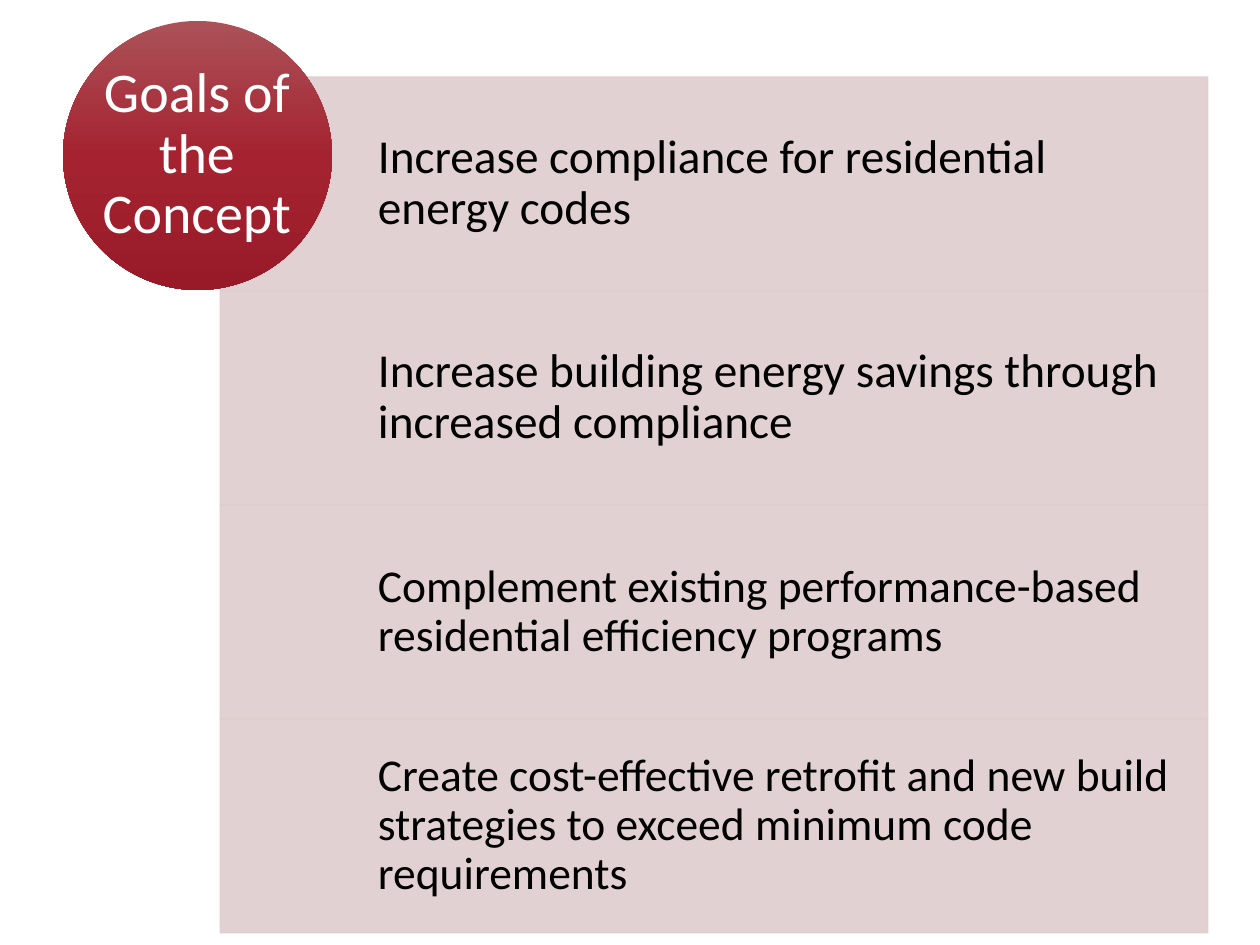
"""Build the slide listing the four goals of the concept."""
from copy import deepcopy

from lxml import etree
from pptx import Presentation
from pptx.dml.color import RGBColor
from pptx.enum.shapes import MSO_SHAPE
from pptx.enum.text import MSO_ANCHOR, PP_ALIGN
from pptx.oxml.ns import qn
from pptx.util import Emu, Pt

RECTANGLE, OVAL = MSO_SHAPE.RECTANGLE, MSO_SHAPE.OVAL
MIDDLE = MSO_ANCHOR.MIDDLE
LEFT, CENTER = PP_ALIGN.LEFT, PP_ALIGN.CENTER

BLACK = RGBColor(0x00, 0x00, 0x00)
WHITE = RGBColor(0xFF, 0xFF, 0xFF)
BLUSH = RGBColor(0xDF, 0xCD, 0xCE)
BADGE_REDS = [
    (0, RGBColor(0xAB, 0x52, 0x58)),
    (0.5, RGBColor(0xA5, 0x23, 0x31)),
    (1, RGBColor(0x98, 0x1A, 0x28)),
]

EMU_PER_PX = 914400 / 126
ROW_TOP, ROW_HEIGHT = 77, 214
GOALS = [
    ("Increase compliance for residential energy codes", 27, 26),
    ("Increase building energy savings through increased compliance", 27, 26),
    ("Complement existing performance-based residential efficiency programs", 26, 25),
    ("Create cost-effective retrofit and new build strategies to exceed minimum code requirements", 26, 25),
]


def px(*lengths):
    return [Emu(round(length * EMU_PER_PX)) for length in lengths]


def add_text(text, box, size, color, align=LEFT, inset=0):
    frame = slide.shapes.add_textbox(*px(*box)).text_frame
    frame.word_wrap = True
    frame.vertical_anchor = MIDDLE
    frame.margin_left = 0
    frame.margin_top = frame.margin_right = frame.margin_bottom = px(inset)[0]
    paragraph = frame.paragraphs[0]
    paragraph.alignment = align
    paragraph.line_spacing = 0.9
    run = paragraph.add_run()
    run.text = text
    run.font.name = "Calibri"
    run.font.size = Pt(size)
    run.font.color.rgb = color


prs = Presentation()
prs.slide_width, prs.slide_height = px(1260, 945)
slide = prs.slides.add_slide(prs.slide_layouts[6])

for row, (goal, size, inset) in enumerate(GOALS):
    top = ROW_TOP + row * ROW_HEIGHT
    band = slide.shapes.add_shape(RECTANGLE, *px(220, top, 988, ROW_HEIGHT))
    band.shadow.inherit = False
    band.fill.solid()
    band.fill.fore_color.rgb = BLUSH
    band.line.color.rgb = BLUSH
    band.line.width = Pt(0.5)
    for color in band._element.spPr.iter(qn("a:srgbClr")):
        etree.SubElement(color, qn("a:alpha"), val="90000")
    add_text(goal, (378, top, 829, ROW_HEIGHT), size, BLACK, inset=inset)

badge = slide.shapes.add_shape(OVAL, *px(63, 21, 269, 269))
badge.shadow.inherit = False
badge.line.fill.background()
badge.fill.gradient()
badge.fill.gradient_angle = 270
first_stop = next(badge._element.spPr.iter(qn("a:gs")))
first_stop.addnext(deepcopy(first_stop))
for stop, (position, red) in zip(badge.fill.gradient_stops, BADGE_REDS):
    stop.position = position
    stop.color.rgb = red
add_text("Goals of the Concept", (102, 60, 190, 190), 32, WHITE, align=CENTER)

prs.save("out.pptx")
